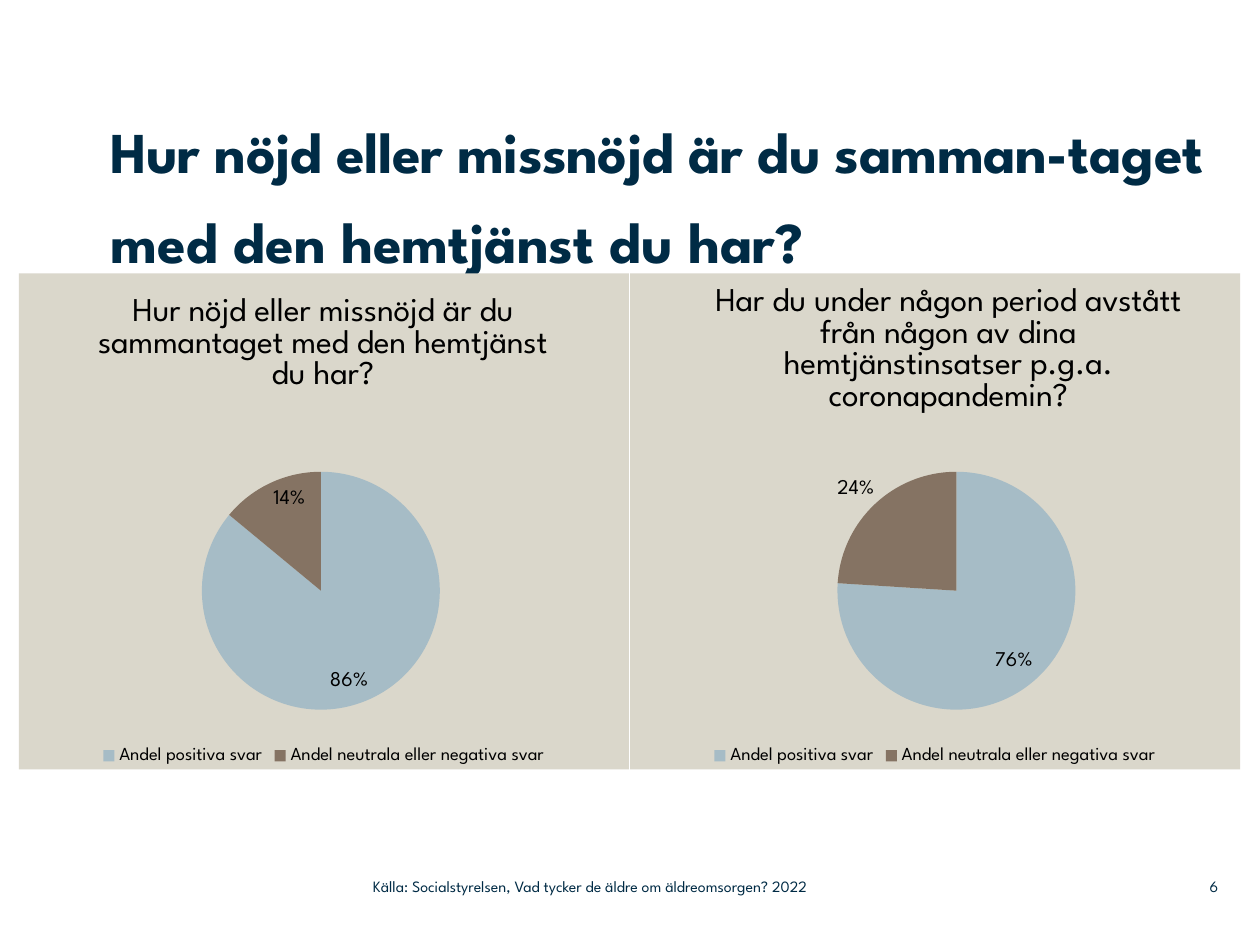
from copy import deepcopy

from lxml import etree
from pptx import Presentation
from pptx.chart.data import CategoryChartData
from pptx.dml.color import RGBColor
from pptx.enum.chart import XL_CHART_TYPE, XL_LABEL_POSITION, XL_LEGEND_POSITION
from pptx.enum.text import MSO_ANCHOR, PP_ALIGN
from pptx.oxml import parse_xml
from pptx.oxml.ns import nsdecls, qn
from pptx.util import Cm, Pt

PIE = XL_CHART_TYPE.PIE
INSIDE_END = XL_LABEL_POSITION.INSIDE_END
BOTTOM = XL_LEGEND_POSITION.BOTTOM
TOP, MIDDLE = MSO_ANCHOR.TOP, MSO_ANCHOR.MIDDLE
LEFT, CENTER, RIGHT = PP_ALIGN.LEFT, PP_ALIGN.CENTER, PP_ALIGN.RIGHT

NAVY = RGBColor(0x00, 0x2B, 0x45)
BLACK = RGBColor(0x00, 0x00, 0x00)
BLUE_GREY = RGBColor(0xA6, 0xBC, 0xC6)
BROWN = RGBColor(0x85, 0x73, 0x63)
SAND = RGBColor(0xDA, 0xD7, 0xCB)

FONT = "League Spartan"
CATEGORIES = ("Andel positiva svar", "Andel neutrala eller negativa svar")
CHART_TOP, CHART_WIDTH, CHART_HEIGHT = 5.51, 12.3, 10


def set_font(font, size, color=BLACK, bold=False):
    font.name = FONT
    font.size = Pt(size)
    font.bold = bold
    font.color.rgb = color


def write_text(tf, text, size=9, color=NAVY, bold=False, align=LEFT,
               anchor=MIDDLE, spacing=None, tracking=None):
    tf.word_wrap = True
    tf.margin_left = tf.margin_right = tf.margin_top = tf.margin_bottom = 0
    tf.vertical_anchor = anchor
    p = tf.paragraphs[0]
    p.alignment = align
    p.line_spacing = spacing
    r = p.add_run()
    r.text = text
    set_font(r.font, size, color, bold)
    if tracking is not None:
        r._r.get_or_add_rPr().set("spc", str(tracking))


def add_text(s, text, left, width, **fmt):
    sp = s.shapes.add_textbox(Cm(left), Cm(17.5), Cm(width), Cm(0.74))
    write_text(sp.text_frame, text, **fmt)


def add_title(s):
    sp = s.shapes.title
    sp.left, sp.top, sp.width, sp.height = Cm(2.23), Cm(1.91), Cm(22.71), Cm(3.6)
    fmt = dict(size=33, bold=True, anchor=TOP, spacing=1.3)
    write_text(sp.text_frame, "Hur nöjd eller missnöjd är du samman-", tracking=-30, **fmt)
    write_text(sp.text_frame, "taget med den hemtjänst du har?", **fmt)


def manual_layout(**values):
    items = "".join(f'<c:{tag} val="{val}"/>' for tag, val in values.items())
    return parse_xml(f'<c:layout {nsdecls("c")}><c:manualLayout>{items}'
                     "</c:manualLayout></c:layout>")


def place(chart, following, **values):
    node = chart.element.xpath(following)[0]
    for old in node.getparent().findall(qn("c:layout")):
        node.getparent().remove(old)
    node.addprevious(manual_layout(xMode="edge", yMode="edge", **values))


def fill_chart(chart, color):
    chart.element.find(qn("c:chart")).addnext(parse_xml(
        f'<c:spPr {nsdecls("c", "a")}><a:solidFill><a:srgbClr val="{color}"/>'
        "</a:solidFill><a:ln><a:noFill/></a:ln></c:spPr>"))


def move_label(chart, index, dx, dy):
    labels = chart.element.xpath(".//c:ser/c:dLbls")[0]
    label = etree.Element(qn("c:dLbl"))
    etree.SubElement(label, qn("c:idx")).set("val", str(index))
    label.append(manual_layout(x=dx, y=dy))
    for child in labels:
        if child.tag != qn("c:showLeaderLines"):
            label.append(deepcopy(child))
    labels.insert(0, label)


def add_pie(s, left, title, values, title_at, plot_at):
    data = CategoryChartData()
    data.categories = CATEGORIES
    data.add_series("Series 1", values)
    chart = s.shapes.add_chart(PIE, Cm(left), Cm(CHART_TOP), Cm(CHART_WIDTH),
                               Cm(CHART_HEIGHT), data).chart
    set_font(chart.font, 18)
    fill_chart(chart, SAND)

    chart.has_title = True
    p = chart.chart_title.text_frame.paragraphs[0]
    p.alignment = CENTER
    r = p.add_run()
    r.text = title
    set_font(r.font, 19)
    place(chart, ".//c:title/c:overlay", x=title_at[0], y=title_at[1])
    x, y, w, h = plot_at
    place(chart, ".//c:plotArea/c:pieChart", x=x, y=y, w=w, h=h)
    chart.element.xpath(".//c:plotArea/c:layout/c:manualLayout")[0].insert(
        0, parse_xml(f'<c:layoutTarget {nsdecls("c")} val="inner"/>'))

    chart.has_legend = True
    chart.legend.position = BOTTOM
    chart.legend.include_in_layout = False
    set_font(chart.legend.font, 10.5)

    chart.plots[0].vary_by_categories = True
    series = chart.plots[0].series[0]
    for i, color in enumerate((BLUE_GREY, BROWN)):
        fill = series.points[i].format.fill
        fill.solid()
        fill.fore_color.rgb = color
    labels = series.data_labels
    labels.show_value = False
    labels.show_percentage = True
    labels.number_format = "0%"
    labels.number_format_is_linked = False
    labels.position = INSIDE_END
    set_font(labels.font, 12)
    return chart


def main():
    prs = Presentation()
    prs.slide_width, prs.slide_height = Cm(25.4), Cm(19.05)
    s = prs.slides.add_slide(prs.slide_layouts[5])
    add_title(s)
    chart = add_pie(s, 12.7, "Har du under någon period avstått från någon av dina "
                    "hemtjänstinsatser p.g.a. coronapandemin?", (76, 24),
                    (0.13, 0.01), (0.34, 0.4, 0.39, 0.48))
    move_label(chart, 1, -0.07, -0.06)
    add_pie(s, 0.38, "Hur nöjd eller missnöjd är du sammantaget med den "
            "hemtjänst du har?", (86, 14), (0.12, 0.03), (0.3, 0.4, 0.39, 0.48))
    add_text(s, "Källa: Socialstyrelsen, Vad tycker de äldre om äldreomsorgen? 2022",
             7.52, 11.25)
    add_text(s, "6", 23.37, 1.19, align=RIGHT)
    prs.save("out.pptx")


if __name__ == "__main__":
    main()
